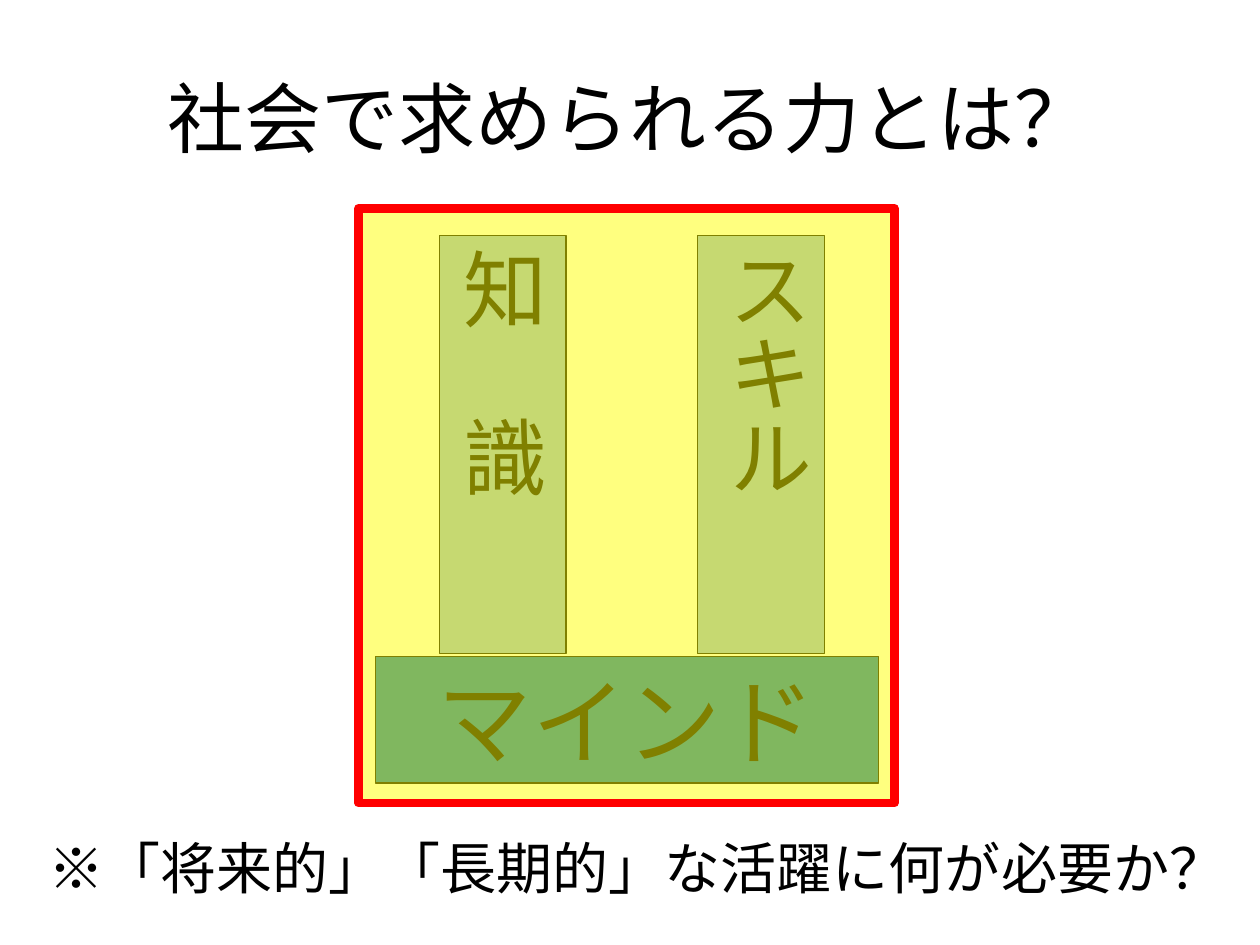
"""Build the slide about the abilities that society asks for."""
from lxml import etree
from pptx import Presentation
from pptx.dml import color
from pptx.enum import shapes, text
from pptx.oxml import ns
from pptx.util import Pt

COLORS = {"ink": "000000", "base": "0070C0", "pillar": "8EB4E3",
          "veil": "FFFF00", "frame": "FF0000"}
HEADING_FONT = "Cabin"
JAPANESE_FONT = "Noto Sans CJK JP"


def rgb(name):
    """Return the named colour."""
    return color.RGBColor.from_string(COLORS[name])


def write(shape, words, size, font, anchor):
    """Put one centred run of text into a shape."""
    frame = shape.text_frame
    frame.word_wrap = True
    frame.vertical_anchor = anchor
    paragraph = frame.paragraphs[0]
    paragraph.alignment = text.PP_ALIGN.CENTER
    run = paragraph.add_run()
    run.text = words
    run.font.size = Pt(size)
    run.font.name = font
    run.font.color.rgb = rgb("ink")
    east_asian = etree.SubElement(run._r.get_or_add_rPr(), ns.qn("a:ea"))
    east_asian.set("typeface", JAPANESE_FONT)
    run.font._element.find(ns.qn("a:latin")).addnext(east_asian)


def add_rectangle(parent, box, fill, line, width):
    """Add a flat outlined rectangle."""
    shape = parent.add_shape(shapes.MSO_SHAPE.RECTANGLE, *map(Pt, box))
    shape.shadow.inherit = False
    shape.fill.solid()
    shape.fill.fore_color.rgb = rgb(fill)
    shape.line.color.rgb = rgb(line)
    shape.line.width = Pt(width)
    return shape


def add_block(parent, box, fill, words, size, anchor, vertical=False):
    """Add a labelled building block."""
    shape = add_rectangle(parent, box, fill, "ink", 0.75)
    write(shape, words, size, JAPANESE_FONT, anchor)
    shape.text_frame.auto_size = text.MSO_AUTO_SIZE.SHAPE_TO_FIT_TEXT
    if vertical:
        shape.text_frame._txBody.bodyPr.set("vert", "eaVert")


def add_title(slide, box):
    """Place and format the title."""
    title = slide.shapes.title
    title.left, title.top, title.width, title.height = map(Pt, box)
    write(title, "社会で求められる力とは？", 44, HEADING_FONT, text.MSO_ANCHOR.MIDDLE)


def add_structure(slide, box):
    """Draw two pillars standing on a base."""
    left, top, width, height = box
    thickness = 72.5
    base_top = top + height - thickness
    group = slide.shapes.add_group_shape().shapes
    add_block(group, (left, base_top, width, thickness), "base",
              "マインド", 54, text.MSO_ANCHOR.MIDDLE)
    pillars = [("知\u3000識".replace("\u3000", "　"), text.MSO_ANCHOR.MIDDLE),
               ("スキル", text.MSO_ANCHOR.TOP)]
    for index, (words, anchor) in enumerate(pillars):
        pillar = (left + 36.5 + index * 147.5, top, thickness, 239)
        add_block(group, pillar, "pillar", words, 48, anchor, vertical=True)


def add_highlight(slide, box):
    """Lay a half-transparent framed veil over the structure."""
    veil = add_rectangle(slide.shapes, box, "veil", "frame", 5)
    fill = veil._element.spPr.find(ns.qn("a:solidFill"))
    etree.SubElement(fill[0], ns.qn("a:alpha")).set("val", "50000")
    etree.SubElement(veil.line._get_or_add_ln(), ns.qn("a:round"))


def add_question(slide, box):
    """Add the closing question."""
    question = slide.shapes.add_textbox(*map(Pt, box))
    write(question, "※「将来的」「長期的」な活躍に何が必要か？", 32,
          HEADING_FONT, text.MSO_ANCHOR.TOP)
    question.text_frame.auto_size = text.MSO_AUTO_SIZE.SHAPE_TO_FIT_TEXT


def main():
    """Build and save the presentation."""
    presentation = Presentation()
    presentation.slide_width, presentation.slide_height = Pt(720), Pt(540)
    slide = presentation.slides.add_slide(presentation.slide_layouts[5])
    add_title(slide, (36, 21.6, 648, 90))
    add_structure(slide, (214.5, 134.5, 287.5, 313))
    add_highlight(slide, (205, 119, 306, 340))
    add_question(slide, (8.5, 472.5, 711.5, 46))
    presentation.save("out.pptx")


if __name__ == "__main__":
    main()
